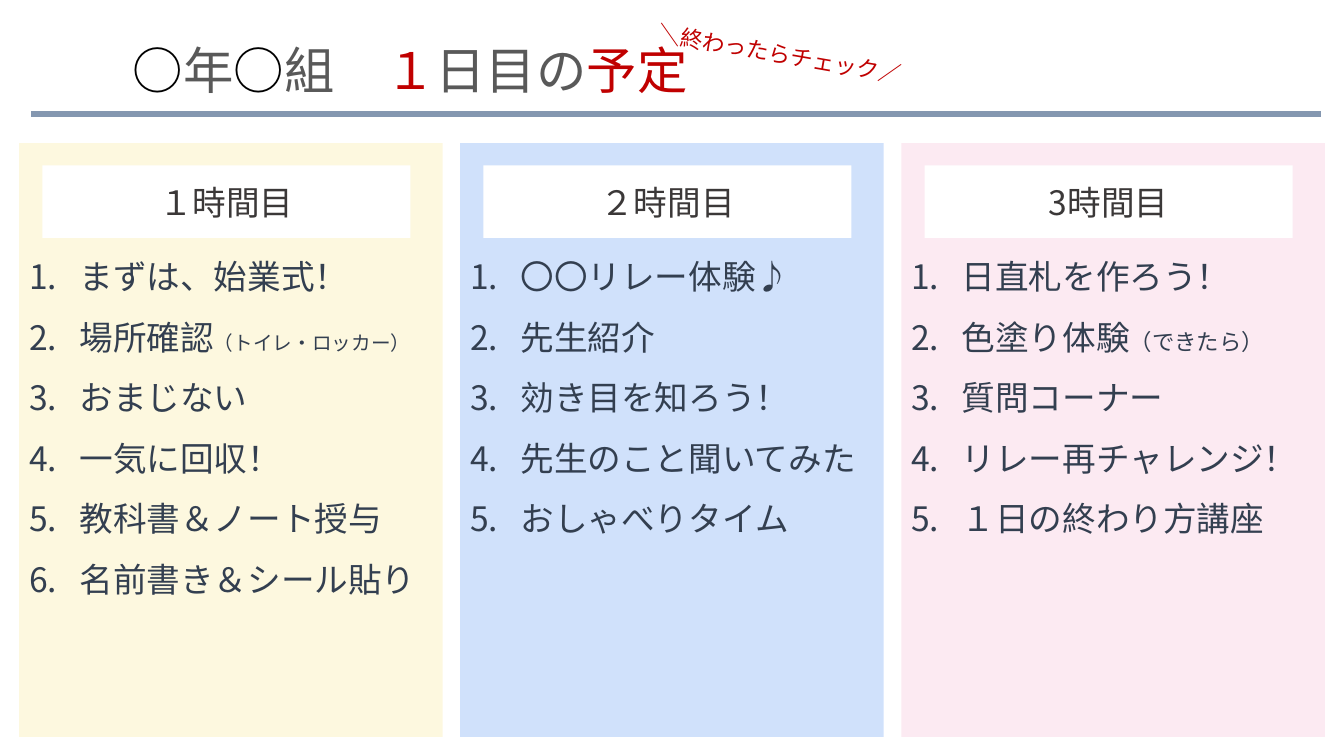
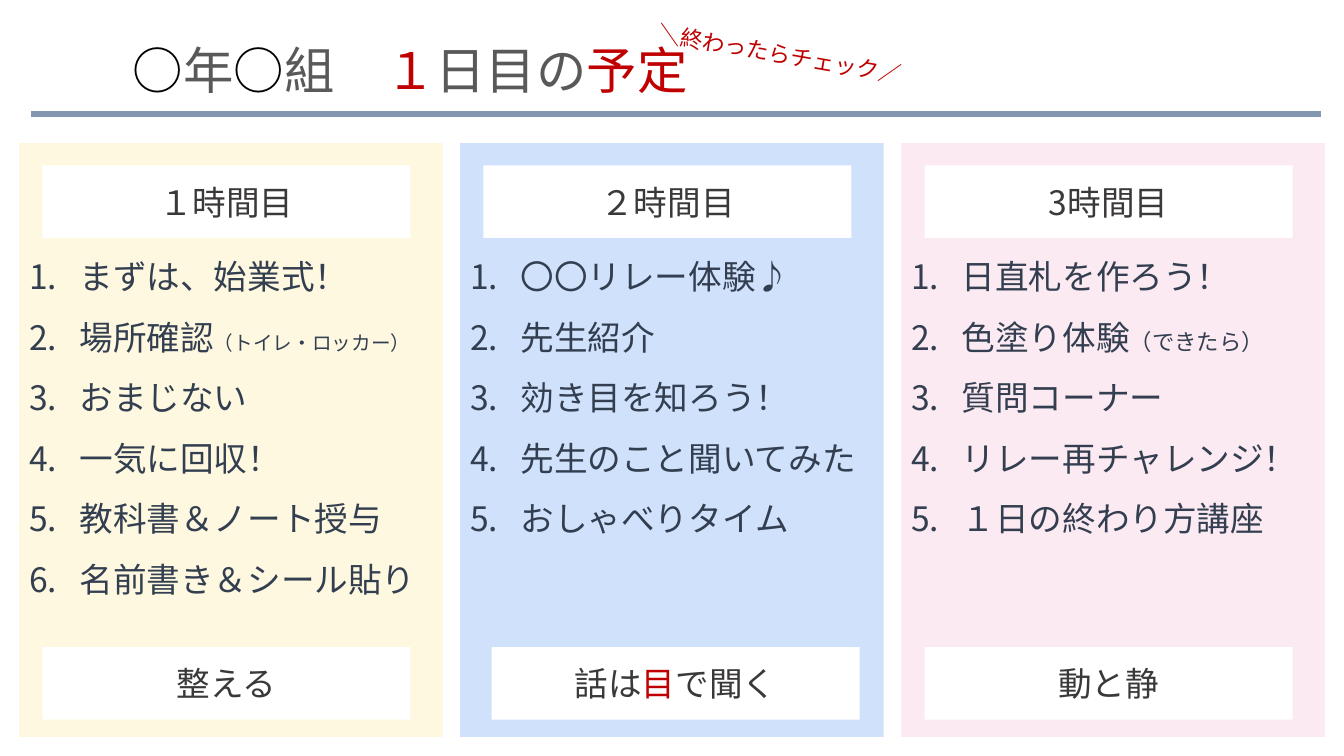
"""Build two timetable slides for the first day of school."""
import dataclasses
import typing

import pptx
import pptx.dml.color
import pptx.enum.shapes
import pptx.enum.text
import pptx.oxml
import pptx.oxml.ns
import pptx.util

Inches = pptx.util.Inches
Pt = pptx.util.Pt
RGB = pptx.dml.color.RGBColor
ALIGN = pptx.enum.text.PP_ALIGN
ANCHOR = pptx.enum.text.MSO_ANCHOR
RECT = pptx.enum.shapes.MSO_SHAPE.RECTANGLE
qn = pptx.oxml.ns.qn

FONT = "Noto Sans CJK JP"
BLACK = RGB(0x00, 0x00, 0x00)
WHITE = RGB(0xFF, 0xFF, 0xFF)
GREY = RGB(0x59, 0x59, 0x59)
RED = RGB(0xC0, 0x00, 0x00)
RULE = RGB(0x84, 0x97, 0xB0)
NAVY = RGB(0x33, 0x3F, 0x50)
DARK = RGB(0x3B, 0x38, 0x38)
YELLOW = RGB(0xFB, 0xE8, 0x98)
BLUE = RGB(0x65, 0x9E, 0xF5)
PINK = RGB(0xF7, 0xBB, 0xD4)

PANEL_LEFT, PANEL_TOP, PANEL_W, PANEL_H = 0.19, 1.42, 4.2, 5.89
PANEL_PITCH = (8.94 - PANEL_LEFT) / 2
LABEL_W, LABEL_H, LABEL_INSET = 3.65, 0.72, 0.23
HEADING_TOP, GOAL_TOP = 1.64, 6.42


class Run(typing.NamedTuple):
    """A piece of text with its size and colour."""
    text: str
    size: float = 24
    color: RGB = NAVY


@dataclasses.dataclass
class Period:
    """One lesson column: heading, numbered activities and closing goal."""
    heading: str
    color: RGB
    items: list[list[Run]]
    goal: list[Run]
    goal_inset: float = LABEL_INSET


TITLE = [Run("○", 36, BLACK), Run("年", 36, GREY), Run("○", 36, BLACK),
         Run("組\u3000".replace("\u3000", "　"), 36, GREY), Run("１", 36, RED),
         Run("日目の", 36, GREY), Run("予定", 36, RED)]
CAPTION = [Run("＼終わったらチェック／", 16, RED)]
PERIODS = [
    Period("１時間目", YELLOW,
           [[Run("まずは、始業式！")],
            [Run("場所確認"), Run("（トイレ・ロッカー）", 14)],
            [Run("おまじない")], [Run("一気に回収！")],
            [Run("教科書＆ノート授与")], [Run("名前書き＆シール貼り")]],
           [Run("整える", color=DARK)]),
    Period("２時間目", BLUE,
           [[Run("〇〇リレー体験♪")], [Run("先生紹介")],
            [Run("効き目を知ろう！")], [Run("先生のこと聞いてみた")],
            [Run("おしゃべりタイム")]],
           [Run("話は", color=DARK), Run("目", color=RED), Run("で聞く", color=DARK)],
           goal_inset=0.31),
    Period("3時間目", PINK,
           [[Run("日直札を作ろう！")],
            [Run("色塗り体験"), Run("（できたら）", 16)],
            [Run("質問コーナー")], [Run("リレー再チャレンジ！")],
            [Run("１日の終わり方講座")]],
           [Run("動と静", color=DARK)]),
]


def set_attrs(obj: typing.Any, **values: typing.Any) -> None:
    """Set several attributes of one object."""
    for name, value in values.items():
        setattr(obj, name, value)


def add_runs(p: typing.Any, runs: list[Run]) -> None:
    """Append formatted runs to a paragraph."""
    for run in runs:
        r = p.add_run()
        r.text = run.text
        set_attrs(r.font, name=FONT, size=Pt(run.size))
        r.font.color.rgb = run.color
        ea = pptx.oxml.parse_xml(f'<a:ea {pptx.oxml.ns.nsdecls("a")} typeface="{FONT}"/>')
        r.font._element.find(qn("a:latin")).addnext(ea)


def add_rect(s: typing.Any, x: float, y: float, w: float, h: float, color: RGB) -> typing.Any:
    """Draw a plain filled rectangle."""
    sp = s.shapes.add_shape(RECT, Inches(x), Inches(y), Inches(w), Inches(h))
    sp.shadow.inherit = False
    sp.fill.solid()
    sp.fill.fore_color.rgb = color
    sp.line.fill.background()
    return sp


def add_text(s: typing.Any, x: float, y: float, w: float, h: float, runs: list[Run]) -> typing.Any:
    """Draw a one-line text box."""
    sp = s.shapes.add_textbox(Inches(x), Inches(y), Inches(w), Inches(h))
    sp.text_frame.word_wrap = True
    add_runs(sp.text_frame.paragraphs[0], runs)
    return sp


def add_label(s: typing.Any, x: float, y: float, runs: list[Run]) -> None:
    """Draw a white label with centred text."""
    tf = add_rect(s, x, y, LABEL_W, LABEL_H, WHITE).text_frame
    set_attrs(tf, vertical_anchor=ANCHOR.MIDDLE, word_wrap=True)
    p = tf.paragraphs[0]
    p.alignment = ALIGN.CENTER
    add_runs(p, runs)


def add_panel(s: typing.Any, x: float, period: Period) -> None:
    """Draw a tinted panel with its numbered activities."""
    sp = add_rect(s, x, PANEL_TOP, PANEL_W, PANEL_H, period.color)
    alpha = sp.fill._xPr.find(f'.//{qn("a:srgbClr")}').makeelement(qn("a:alpha"), {"val": "30000"})
    sp.fill._xPr.find(f'.//{qn("a:srgbClr")}').append(alpha)
    tf = sp.text_frame
    set_attrs(tf, vertical_anchor=ANCHOR.TOP, word_wrap=True, margin_top=Inches(0.92))
    for i, item in enumerate(period.items):
        p = tf.add_paragraph() if i else tf.paragraphs[0]
        set_attrs(p, alignment=ALIGN.LEFT, line_spacing=Pt(43.2))
        pPr = p._p.get_or_add_pPr()
        for name, value in {"marL": Inches(0.5), "indent": -Inches(0.5)}.items():
            pPr.set(name, str(value))
        pPr.append(pPr.makeelement(qn("a:buAutoNum"), {"type": "arabicPeriod"}))
        add_runs(p, item)


def add_header(s: typing.Any) -> None:
    """Draw the title and the rule below it."""
    sp = add_text(s, 1.22, 0.29, 10.38, 0.71, TITLE)
    sp.text_frame.paragraphs[0].line_spacing = Pt(47)
    ln = s.shapes.add_connector(pptx.enum.shapes.MSO_CONNECTOR.STRAIGHT,
                                Inches(0.31), Inches(1.13), Inches(13.1), Inches(1.13))
    ln.line.color.rgb = RULE
    ln.line.width = Pt(4.5)
    spPr = ln._element.spPr
    spPr.append(spPr.makeelement(qn("a:effectLst"), {}))


def add_slide(prs: typing.Any, with_goals: bool) -> None:
    """Build one timetable slide, with or without the goals."""
    s = prs.slides.add_slide(prs.slide_layouts[6])
    add_header(s)
    for i, period in enumerate(PERIODS):
        x = PANEL_LEFT + i * PANEL_PITCH
        add_panel(s, x, period)
        add_label(s, x + LABEL_INSET, HEADING_TOP, [Run(period.heading, color=DARK)])
        if with_goals:
            add_label(s, x + period.goal_inset, GOAL_TOP, period.goal)
    sp = add_text(s, 6.42, 0.35, 2.66, 0.37, CAPTION)
    sp.rotation = 9.9
    sp.text_frame.vertical_anchor = ANCHOR.MIDDLE


def main() -> None:
    """Create and save the presentation."""
    prs = pptx.Presentation()
    set_attrs(prs, slide_width=Inches(13.33), slide_height=Inches(7.5))
    for with_goals in (False, True):
        add_slide(prs, with_goals)
    prs.save("out.pptx")


if __name__ == "__main__":
    main()
